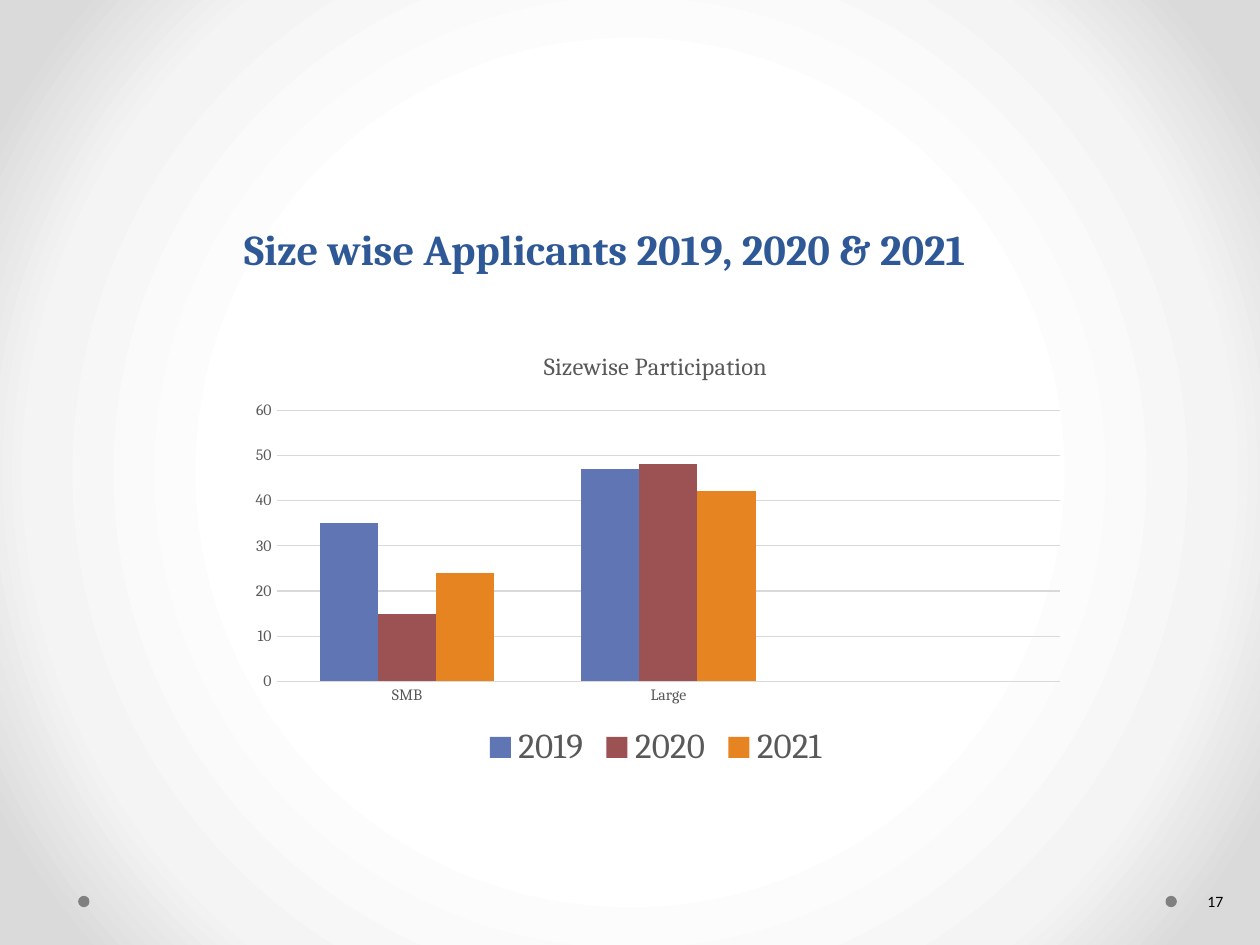
"""Build the slide on applicants by company size, 2019 to 2021."""
from dataclasses import dataclass

from lxml import etree
from pptx import Presentation
from pptx import util as u
from pptx.chart.data import CategoryChartData
from pptx.dml.color import RGBColor
from pptx.enum import chart as charts, shapes, text
from pptx.oxml import parse_xml
from pptx.oxml.ns import nsdecls, qn

TITLE = "Size wise Applicants 2019, 2020 & 2021"
PAGE_NUMBER = "17"
CHART_TITLE = "Sizewise Participation"
CATEGORIES = ["SMB", "Large", ""]
APPLICANTS = {
    "2019": ([35, 47, None], "6076B4"),
    "2020": ([15, 48, None], "9C5252"),
    "2021": ([24, 42, None], "E68422"),
}
BACKGROUND = [(50, "FFFFFF"), (76, "F4F4F4"), (92, "DADADA")]
DOT_LEFTS = [0.62, 9.25]
PLOT_AREA = {"x": 0.05, "y": 0.18, "w": 0.93, "h": 0.61}


@dataclass(frozen=True)
class Theme:
    """Hold the fonts, colours and type sizes."""
    serif: str = "Cambria"
    sans: str = "Calibri"
    heading: str = "2F5897"
    label: str = "595959"
    ink: str = "000000"
    grid: str = "D9D9D9"
    dot: str = "808080"
    heading_size: float = 24.3
    chart_title_size: float = 14
    axis_size: float = 9
    legend_size: float = 20
    number_size: float = 9


THEME = Theme()


def style_font(font, name, size, color, bold=False):
    """Set the look of a font."""
    font.name, font.size, font.bold = name, u.Pt(size), bold
    font.color.rgb = RGBColor.from_string(color)


def paint_background(page):
    """Fill the page with a circular gradient."""
    fill = page.background.fill
    fill.gradient()
    gradient = page._element.find(".//" + qn("a:gradFill"))
    stops = "".join(
        f'<a:gs pos="{position * 1000}"><a:srgbClr val="{color}"/></a:gs>'
        for position, color in BACKGROUND)
    gradient.getparent().replace(gradient, parse_xml(
        f'<a:gradFill {nsdecls("a")} rotWithShape="1"><a:gsLst>{stops}</a:gsLst>'
        '<a:path path="circle"><a:fillToRect l="50000" t="50000" r="50000" b="50000"/>'
        '</a:path></a:gradFill>'))


def add_dot(page, left):
    """Add one footer dot."""
    dot = page.shapes.add_shape(shapes.MSO_SHAPE.OVAL, u.Inches(left), u.Inches(7.11),
                                u.Inches(0.09), u.Inches(0.09))
    dot.shadow.inherit = False
    dot.fill.solid()
    dot.fill.fore_color.rgb = RGBColor.from_string(THEME.dot)
    dot.line.fill.background()


def add_text(page, words, place, anchor, **look):
    """Add a centred line of text and return its paragraph."""
    box = page.shapes.add_textbox(*map(u.Inches, place))
    frame = box.text_frame
    frame.word_wrap = True
    frame.vertical_anchor = anchor
    para = frame.paragraphs[0]
    para.alignment = text.PP_ALIGN.CENTER
    span = para.add_run()
    span.text = words
    style_font(span.font, **look)
    return para


def place_plot(chart):
    """Fix the inner plot area inside the chart."""
    area = chart._chartSpace.find(".//" + qn("c:plotArea"))
    for old in area.findall(qn("c:layout")):
        area.remove(old)
    layout = etree.Element(qn("c:layout"))
    manual = etree.SubElement(layout, qn("c:manualLayout"))
    settings = {"layoutTarget": "inner", "xMode": "edge", "yMode": "edge", **PLOT_AREA}
    for name, value in settings.items():
        etree.SubElement(manual, qn(f"c:{name}")).set("val", str(value))
    area.insert(0, layout)


def add_applicant_chart(page):
    """Add the clustered columns by company size."""
    data = CategoryChartData()
    data.categories = CATEGORIES
    for year, (values, _) in APPLICANTS.items():
        data.add_series(year, values)
    chart = page.shapes.add_chart(
        charts.XL_CHART_TYPE.COLUMN_CLUSTERED,
        *map(u.Inches, (1.86, 2.62, 6.69, 3.53)), data).chart
    style_font(chart.font, THEME.serif, 10, THEME.ink)

    chart.has_title = True
    span = chart.chart_title.text_frame.paragraphs[0].add_run()
    span.text = CHART_TITLE
    style_font(span.font, THEME.serif, THEME.chart_title_size, THEME.label)
    chart.chart_title.include_in_layout = False

    chart.has_legend = True
    chart.legend.position = charts.XL_LEGEND_POSITION.BOTTOM
    chart.legend.include_in_layout = False
    style_font(chart.legend.font, THEME.serif, THEME.legend_size, THEME.label)

    for axis in (chart.category_axis, chart.value_axis):
        axis.major_tick_mark = axis.minor_tick_mark = charts.XL_TICK_MARK.NONE
        axis.format.line.fill.background()
        style_font(axis.tick_labels.font, THEME.serif, THEME.axis_size, THEME.label)
    scale = chart.value_axis
    scale.minimum_scale, scale.maximum_scale, scale.major_unit = 0, 60, 10
    grid = scale.major_gridlines.format.line
    grid.width = u.Pt(0.75)
    grid.color.rgb = RGBColor.from_string(THEME.grid)

    plot = chart.plots[0]
    plot.gap_width, plot.overlap, plot.vary_by_categories = 150, 0, False
    for series, (_, color) in zip(plot.series, APPLICANTS.values()):
        series.format.fill.solid()
        series.format.fill.fore_color.rgb = RGBColor.from_string(color)
    place_plot(chart)


def main():
    """Assemble and save the deck."""
    deck = Presentation()
    deck.slide_width, deck.slide_height = u.Inches(10), u.Inches(7.5)
    page = deck.slides.add_slide(deck.slide_layouts[6])
    paint_background(page)
    for left in DOT_LEFTS:
        add_dot(page, left)
    heading = add_text(page, TITLE, (1.05, 1.6, 7.5, 0.62), text.MSO_ANCHOR.BOTTOM,
                       name=THEME.serif, size=THEME.heading_size,
                       color=THEME.heading, bold=True)
    heading.line_spacing = u.Pt(58)
    add_text(page, PAGE_NUMBER, (9.34, 6.95, 0.61, 0.4), text.MSO_ANCHOR.MIDDLE,
             name=THEME.sans, size=THEME.number_size, color=THEME.ink)
    add_applicant_chart(page)
    deck.save("out.pptx")


if __name__ == "__main__":
    main()
